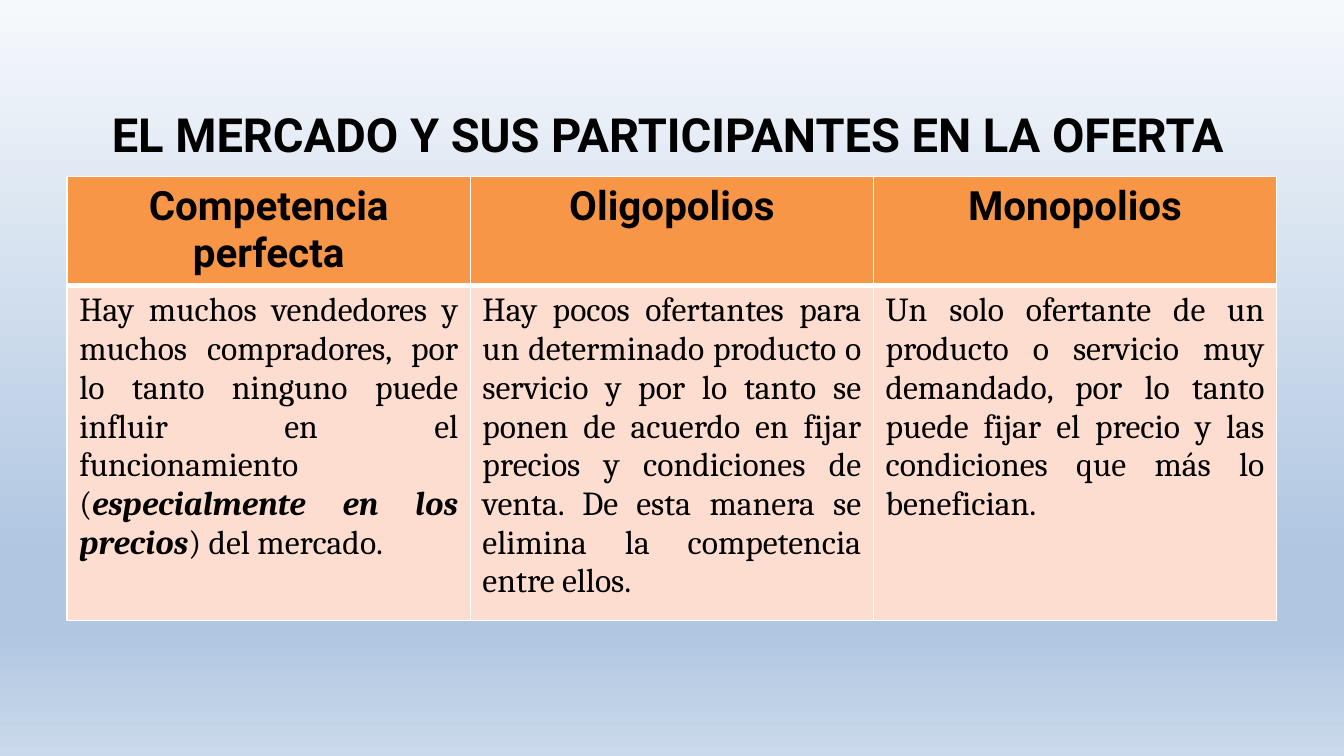
from lxml.etree import SubElement
from pptx import Presentation
from pptx.dml.color import RGBColor
from pptx.enum.text import MSO_ANCHOR, PP_ALIGN
from pptx.oxml.ns import qn
from pptx.util import Pt

HEADING_FONT, BODY_FONT = "Roboto", "Cambria"
BLACK, WHITE, ORANGE, PEACH = "000000", "FFFFFF", "F79646", "FCDDCF"
SKY_STOPS = [(0, "F6F9FC"), (74, "B0C6E1"), (83, "B0C6E1"), (100, "CAD9EB")]
TITLE = "EL MERCADO Y SUS PARTICIPANTES EN LA OFERTA"
MARKETS = [
    ("Competencia perfecta", [
        ("Hay muchos vendedores y muchos compradores, por lo tanto ninguno "
         "puede influir en el funcionamiento (", False),
        ("especialmente en los precios", True),
        (") del mercado.", False)]),
    ("Oligopolios", [
        ("Hay pocos ofertantes para un determinado producto o servicio y por "
         "lo tanto se ponen de acuerdo en fijar precios y condiciones de "
         "venta. De esta manera se elimina la competencia entre ellos.", False)]),
    ("Monopolios", [
        ("Un solo ofertante de un producto o servicio muy demandado, por lo "
         "tanto puede fijar el precio y las condiciones que más lo "
         "benefician.", False)]),
]


def color(value):
    """Turn a hex string into a colour."""
    return RGBColor.from_string(value)


def add_run(paragraph, text, font, size, bold=False, italic=False):
    """Append one black run to a paragraph."""
    run = paragraph.add_run()
    run.text = text
    run.font.name = font
    run.font.size = Pt(size)
    run.font.bold = bold
    run.font.italic = italic
    run.font.color.rgb = color(BLACK)


def paint_background(slide, stops):
    """Fill the slide with a gradient that runs downwards."""
    fill = slide.background.fill
    fill.gradient()
    fill.gradient_angle = 270
    stop_list = slide.element.find(".//" + qn("a:gsLst"))
    for old_stop in list(stop_list):
        stop_list.remove(old_stop)
    for percent, value in stops:
        stop = SubElement(stop_list, qn("a:gs"), pos=str(percent * 1000))
        SubElement(stop, qn("a:srgbClr"), val=value)


def add_title(slide, text):
    """Place the centred title above the table."""
    box = slide.shapes.add_textbox(Pt(37.4), Pt(60.5), Pt(720), Pt(38))
    frame = box.text_frame
    frame.word_wrap = True
    frame.vertical_anchor = MSO_ANCHOR.MIDDLE
    frame.paragraphs[0].alignment = PP_ALIGN.CENTER
    add_run(frame.paragraphs[0], text, HEADING_FONT, 28, bold=True)


def style_cell(cell, fill, top, bottom, alignment):
    """Give a cell white borders and a fill, and return its paragraph."""
    properties = cell._tc.get_or_add_tcPr()
    for side, width in (("L", 1), ("R", 1), ("T", top), ("B", bottom)):
        border = SubElement(properties, qn("a:ln" + side), w=str(Pt(width)))
        solid = SubElement(border, qn("a:solidFill"))
        SubElement(solid, qn("a:srgbClr"), val=WHITE)
    cell.fill.solid()
    cell.fill.fore_color.rgb = color(fill)
    paragraph = cell.text_frame.paragraphs[0]
    paragraph.alignment = alignment
    return paragraph


def add_market_table(slide, markets):
    """Draw one column per market, with its name over its description."""
    frame = slide.shapes.add_table(2, len(markets), Pt(40), Pt(105.2), Pt(720), Pt(254.6))
    table = frame.table
    table.horz_banding = False
    table.rows[0].height = Pt(63)
    table.rows[1].height = Pt(191.6)
    for column, (name, description) in enumerate(markets):
        heading = style_cell(table.cell(0, column), ORANGE, 1, 3, PP_ALIGN.CENTER)
        add_run(heading, name, HEADING_FONT, 24, bold=True)
        body = style_cell(table.cell(1, column), PEACH, 3, 1, PP_ALIGN.JUSTIFY)
        for text, stressed in description:
            add_run(body, text, BODY_FONT, 20, stressed, stressed)


def main():
    """Build and save the slide."""
    presentation = Presentation()
    presentation.slide_width, presentation.slide_height = Pt(800), Pt(450)
    slide = presentation.slides.add_slide(presentation.slide_layouts[6])
    paint_background(slide, SKY_STOPS)
    add_title(slide, TITLE)
    add_market_table(slide, MARKETS)
    presentation.save("out.pptx")


if __name__ == "__main__":
    main()
